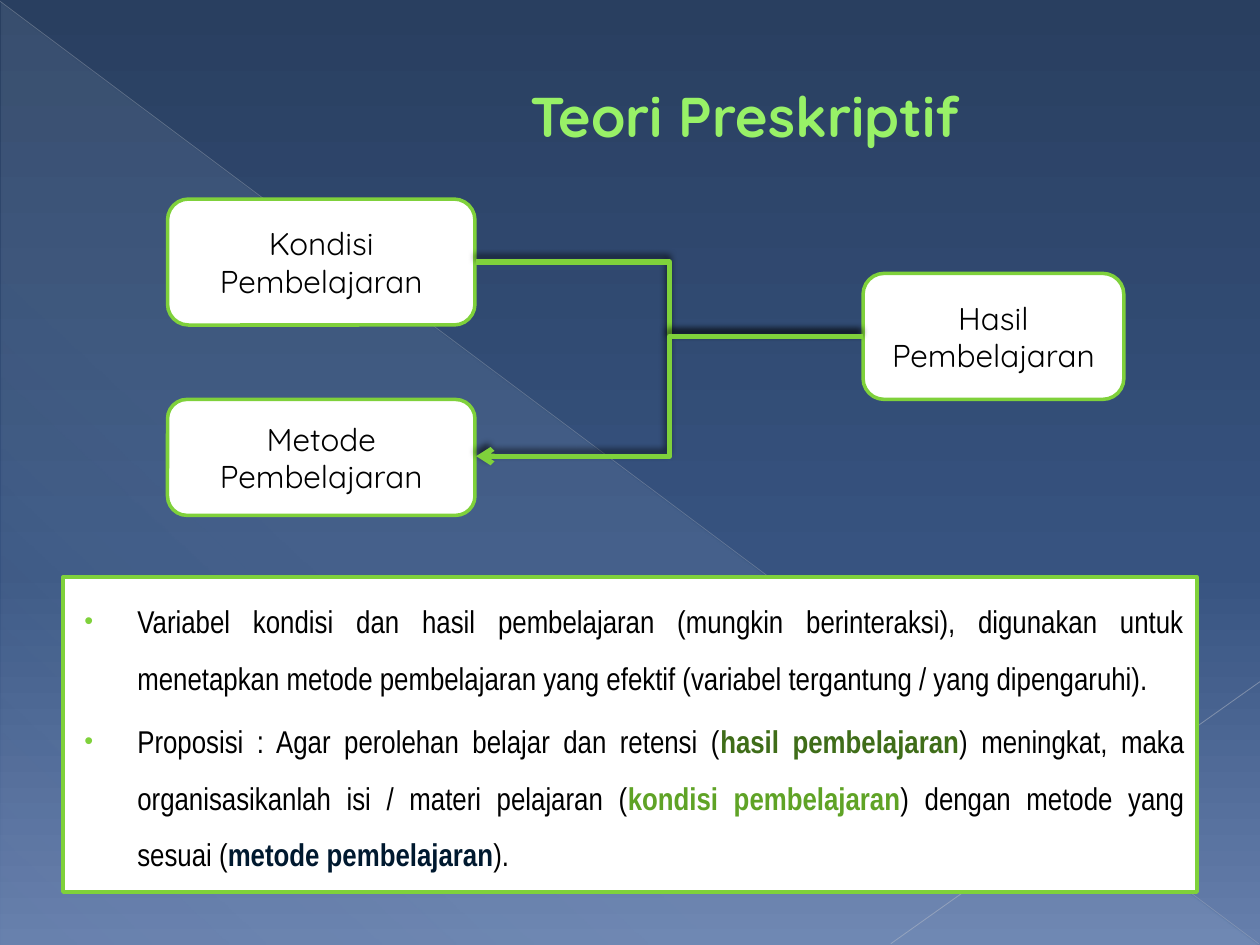
"""Build the prescriptive theory slide."""
from lxml.etree import SubElement as Sub
from pptx import Presentation
from pptx.dml.color import RGBColor
from pptx.enum.shapes import MSO_CONNECTOR as Link, MSO_SHAPE as Form
from pptx.enum.text import MSO_ANCHOR as Anchor, MSO_AUTO_SIZE as Fit, PP_ALIGN as Align
from pptx.oxml.ns import qn
from pptx.util import Inches, Pt

HUES = {
    "white": "FFFFFF", "black": "000000", "green": "7FD13B",
    "lime": "98F167", "edge": "589129", "ice": "D6ECFF",
    "top": "293F60", "mid": "375380", "low": "667FAC",
    "gray": "B7BCC5", "pale": "BFC3CB",
    "result": "3F6D19", "state": "5FA326", "method": "00192F",
}
SANS, BODY = "Quicksand", "Arial Narrow"
POINTS = [
    [("Variabel kondisi dan hasil pembelajaran (mungkin berinteraksi), digunakan untuk "
      "menetapkan metode pembelajaran yang efektif (variabel tergantung / yang "
      "dipengaruhi).", None)],
    [("Proposisi : Agar perolehan belajar dan retensi (", None),
     ("hasil pembelajaran", "result"),
     (") meningkat, maka organisasikanlah isi / materi pelajaran (", None),
     ("kondisi pembelajaran", "state"),
     (") dengan metode yang sesuai (", None),
     ("metode pembelajaran", "method"),
     (").", None)],
]


def rgb(hue):
    return RGBColor.from_string(HUES[hue])


def add(node, tag, **attrs):
    return Sub(node, qn(f"a:{tag}"), {key: str(val) for key, val in attrs.items()})


def tint(node, hue, alpha=100):
    color = add(node, "srgbClr", val=HUES[hue])
    if alpha < 100:
        add(color, "alpha", val=alpha * 1000)


def blend(fill, angle, stops):
    fill.gradient()
    grad = fill._fill._gradFill
    for child in list(grad):
        grad.remove(child)
    row = add(grad, "gsLst")
    for pos, hue, alpha in stops:
        tint(add(row, "gs", pos=pos * 1000), hue, alpha)
    add(grad, "lin", ang=angle * 60000, scaled=0)


def style(font, name, size, hue, bold=False):
    font.name, font.size, font.bold = name, Pt(size), bold
    font.color.rgb = rgb(hue)


def place(shape, *area):
    shape.left, shape.top, shape.width, shape.height = map(Inches, area)


def frame(shape):
    shape.fill.solid()
    shape.fill.fore_color.rgb = rgb("white")
    shape.line.color.rgb = rgb("green")
    shape.line.width = Pt(2)


def wire(slide, kind, start, end, hue, width):
    line = slide.shapes.add_connector(kind, *map(Inches, start + end))
    line.line.color.rgb = rgb(hue)
    line.line.width = Pt(width)
    return line, add(line._element.spPr, "effectLst")


def ray(slide, start, end, hue, width, alpha):
    line, _ = wire(slide, Link.STRAIGHT, start, end, hue, width)
    color = line._element.spPr.find(".//" + qn("a:srgbClr"))
    add(color, "alpha", val=alpha * 1000)


def bend(slide, start, end, arrow=False):
    line, glow = wire(slide, Link.ELBOW, start, end, "green", 3)
    tint(add(glow, "outerShdw", blurRad=Pt(4), dist=Pt(3), dir=245 * 60000,
             algn="br", rotWithShape=0), "black", 60)
    if arrow:
        add(line.line._ln, "tailEnd", type="arrow")


def box(slide, text, *area):
    shape = slide.shapes.add_shape(Form.ROUNDED_RECTANGLE, *map(Inches, area))
    shape.shadow.inherit = False
    frame(shape)
    text_box = shape.text_frame
    text_box.word_wrap = True
    text_box.vertical_anchor = Anchor.MIDDLE
    para = text_box.paragraphs[0]
    para.text, para.alignment = text, Align.CENTER
    style(para.font, SANS, 18, "black")


def scene(slide):
    blend(slide.background.fill, 90,
          [(0, "top", 100), (60, "mid", 100), (100, "low", 100)])
    wedge = slide.shapes.add_shape(
        Form.RIGHT_TRIANGLE, *map(Inches, (0.01, 0.02, 9.98, 7.48)))
    wedge.shadow.inherit = False
    wedge.line.fill.background()
    blend(wedge.fill, 133, [(0, "ice", 10), (70, "ice", 8), (100, "ice", 1)])
    ray(slide, (0, 0.01), (9.99, 7.49), "gray", 0.39, 35)
    ray(slide, (10, 5.41), (7.07, 7.49), "pale", 0.47, 45)


def head(shape, text):
    place(shape, 3.58, 0.5, 4.33, 0.83)
    shape.text_frame.auto_size = Fit.NONE
    shape.text_frame.vertical_anchor = Anchor.MIDDLE
    para = shape.text_frame.paragraphs[0]
    para.alignment = Align.LEFT
    para._p.get_or_add_pPr().set("marL", str(Inches(0.53)))
    run = para.add_run()
    run.text = text
    edge = add(run._r.get_or_add_rPr(), "ln", w=Pt(0.5))
    tint(add(edge, "solidFill"), "edge")
    style(para.font, SANS, 32, "lime", True)


def bullet(para):
    props = para._p.get_or_add_pPr()
    props.set("marL", str(Inches(0.49)))
    props.set("indent", str(Inches(-0.42)))
    tint(add(props, "buClr"), "green")
    add(props, "buSzPct", val=80000)
    add(props, "buFont", typeface="Arial")
    add(props, "buChar", char="•")


def notes(shape, points):
    place(shape, 0.5, 4.58, 9, 2.5)
    frame(shape)
    text_box = shape.text_frame
    text_box.auto_size = Fit.NONE
    for num, parts in enumerate(points):
        para = text_box.add_paragraph() if num else text_box.paragraphs[0]
        bullet(para)
        para.alignment = Align.JUSTIFY
        para.line_spacing, para.space_before = 1.5, Pt(3.6)
        style(para.font, BODY, 18, "black")
        for text, hue in parts:
            run = para.add_run()
            run.text = text
            if hue:
                run.font.bold = True
                run.font.color.rgb = rgb(hue)


def main():
    deck = Presentation()
    deck.slide_width, deck.slide_height = Inches(10), Inches(7.5)
    slide = deck.slides.add_slide(deck.slide_layouts[1])
    title, body = slide.placeholders
    scene(slide)
    for shape in (title, body):
        slide.shapes._spTree.append(shape._element)
    head(title, "Teori Preskriptif")
    notes(body, POINTS)
    box(slide, "Kondisi Pembelajaran", 1.33, 1.58, 2.44, 1)
    box(slide, "Metode Pembelajaran", 1.33, 3.17, 2.44, 0.92)
    box(slide, "Hasil Pembelajaran", 6.85, 2.17, 2.07, 1)
    bend(slide, (3.78, 2.08), (6.85, 2.67))
    bend(slide, (6.85, 2.67), (3.78, 3.62), arrow=True)
    deck.save("out.pptx")


if __name__ == "__main__":
    main()
